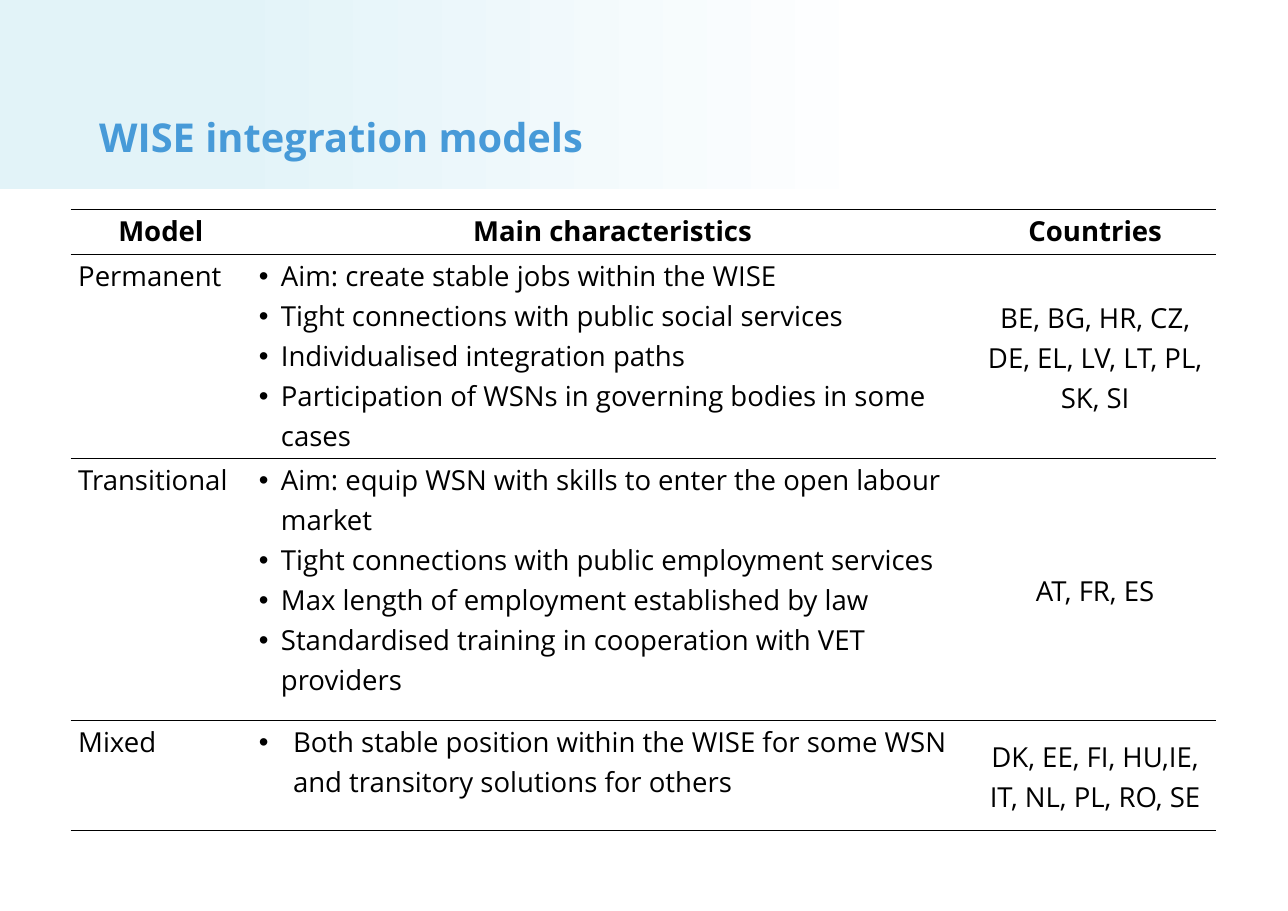
from dataclasses import dataclass
from lxml.etree import SubElement
from pptx import Presentation
from pptx.dml.color import RGBColor
from pptx.enum.shapes import MSO_SHAPE as Shape
from pptx.enum.text import MSO_ANCHOR as Anchor, MSO_AUTO_SIZE as AutoSize, PP_ALIGN as Align
from pptx.oxml.ns import qn
from pptx.slide import Slide
from pptx.table import _Cell as Cell
from pptx.text.text import _Paragraph as Paragraph
from pptx.util import Inches, Pt


@dataclass(frozen=True)
class Theme:
    font: str = "Open Sans"
    title_size: int = 26
    body_size: int = 18
    title: str = "479AD8"
    ink: str = "000000"
    paper: str = "FFFFFF"
    band: str = "E2F3F8"
    title_spacing: float = 0.9
    body_spacing: float = 1.07
    rule_width: float = 1


@dataclass(frozen=True)
class Model:
    name: str
    traits: tuple[str, ...]
    countries: str
    height: float
    indent: float = 0.2


THEME = Theme()
COLUMN_WIDTHS = (1.64, 6.56, 2.2)
HEADINGS = ("Model", "Main characteristics", "Countries")
HEADING_HEIGHT = 0.41
MODELS = (
    Model("Permanent", (
        "Aim: create stable jobs within the WISE",
        "Tight connections with public social services",
        "Individualised integration paths",
        "Participation of WSNs in governing bodies in some cases",
    ), "BE, BG, HR, CZ, DE, EL, LV, LT, PL, SK, SI", 1.85),
    Model("Transitional", (
        "Aim: equip WSN with skills to enter the open labour market",
        "Tight connections with public employment services",
        "Max length of employment established by law",
        "Standardised training in cooperation with VET providers",
    ), "AT, FR, ES", 2.38),
    Model("Mixed", (
        "Both stable position within the WISE for some WSN and transitory solutions for others",
    ), "DK, EE, FI, HU,IE, IT, NL, PL, RO, SE", 1, 0.31),
)


def format_runs(para: Paragraph, size: int, color: str, bold: bool) -> None:
    for span in para.runs:
        span.font.name = THEME.font
        span.font.size = Pt(size)
        span.font.bold = bold
        span.font.color.rgb = RGBColor.from_string(color)


def add_bullet(para: Paragraph, indent: float) -> None:
    props = para._p.get_or_add_pPr()
    props.set("marL", str(Inches(indent)))
    props.set("indent", str(-Inches(indent)))
    color = SubElement(props, qn("a:buClr"))
    SubElement(color, qn("a:srgbClr"), val=THEME.ink)
    SubElement(props, qn("a:buFont"), typeface="Arial")
    SubElement(props, qn("a:buChar"), char="•")


def rule_cell(cell: Cell) -> None:
    props = cell._tc.get_or_add_tcPr()
    for side in ("L", "R"):
        line = SubElement(props, qn(f"a:ln{side}"), w="0")
        SubElement(line, qn("a:noFill"))
    for side in ("T", "B"):
        line = SubElement(props, qn(f"a:ln{side}"), w=str(Pt(THEME.rule_width)))
        fill = SubElement(line, qn("a:solidFill"))
        SubElement(fill, qn("a:srgbClr"), val=THEME.ink)
    cell.fill.background()


def fill_cell(cell: Cell, lines: tuple[str, ...], align: Align = Align.LEFT,
              anchor: Anchor = Anchor.TOP, bold: bool = False, indent: float = 0) -> None:
    rule_cell(cell)
    cell.margin_left = cell.margin_right = Inches(0.07)
    cell.margin_top = cell.margin_bottom = 0
    cell.vertical_anchor = anchor
    cell.text_frame.text = "\n".join(lines)
    for para in cell.text_frame.paragraphs:
        para.alignment = align
        para.line_spacing = THEME.body_spacing
        if indent:
            add_bullet(para, indent)
        format_runs(para, THEME.body_size, THEME.ink, bold)


def add_title(page: Slide, text: str) -> None:
    title = page.shapes.title
    title.left, title.top = Inches(0.8), 0
    title.width, title.height = Inches(9.56), Inches(1.51)
    frame = title.text_frame
    frame.text = text
    frame.word_wrap = True
    frame.auto_size = AutoSize.NONE
    frame.vertical_anchor = Anchor.BOTTOM
    frame.margin_left = frame.margin_right = Inches(0.1)
    frame.margin_top = frame.margin_bottom = Inches(0.05)
    para = frame.paragraphs[0]
    para.alignment = Align.LEFT
    para.line_spacing = THEME.title_spacing
    format_runs(para, THEME.title_size, THEME.title, True)


def add_band(page: Slide) -> None:
    band = page.shapes.add_shape(Shape.RECTANGLE, 0, 0, Inches(8.02), Inches(1.72))
    band.shadow.inherit = False
    band.line.fill.background()
    band.fill.gradient()
    band.fill.gradient_angle = 180
    stops = ((0, THEME.paper), (0.75, THEME.band))
    for stop, (position, color) in zip(band.fill.gradient_stops, stops):
        stop.position = position
        stop.color.rgb = RGBColor.from_string(color)
    page.shapes.title.element.addprevious(band.element)


def add_models(page: Slide) -> None:
    heights = (HEADING_HEIGHT, *(model.height for model in MODELS))
    table = page.shapes.add_table(
        len(heights), len(HEADINGS), Inches(0.64), Inches(1.9),
        Inches(sum(COLUMN_WIDTHS)), Inches(sum(heights))).table
    table.first_row = table.horz_banding = False
    for column, width in zip(table.columns, COLUMN_WIDTHS):
        column.width = Inches(width)
    for row, height in zip(table.rows, heights):
        row.height = Inches(height)
    for index, heading in enumerate(HEADINGS):
        fill_cell(table.cell(0, index), (heading,), Align.CENTER, bold=True)
    for index, model in enumerate(MODELS, start=1):
        fill_cell(table.cell(index, 0), (model.name,))
        fill_cell(table.cell(index, 1), model.traits, indent=model.indent)
        fill_cell(table.cell(index, 2), (model.countries,), Align.CENTER, Anchor.MIDDLE)


def main() -> None:
    deck = Presentation()
    deck.slide_width, deck.slide_height = Inches(11.69), Inches(8.27)
    page = deck.slides.add_slide(deck.slide_layouts.get_by_name("Title Only"))
    page.background.fill.solid()
    page.background.fill.fore_color.rgb = RGBColor.from_string(THEME.paper)
    add_title(page, "WISE integration models")
    add_band(page)
    add_models(page)
    deck.save("out.pptx")


if __name__ == "__main__":
    main()
